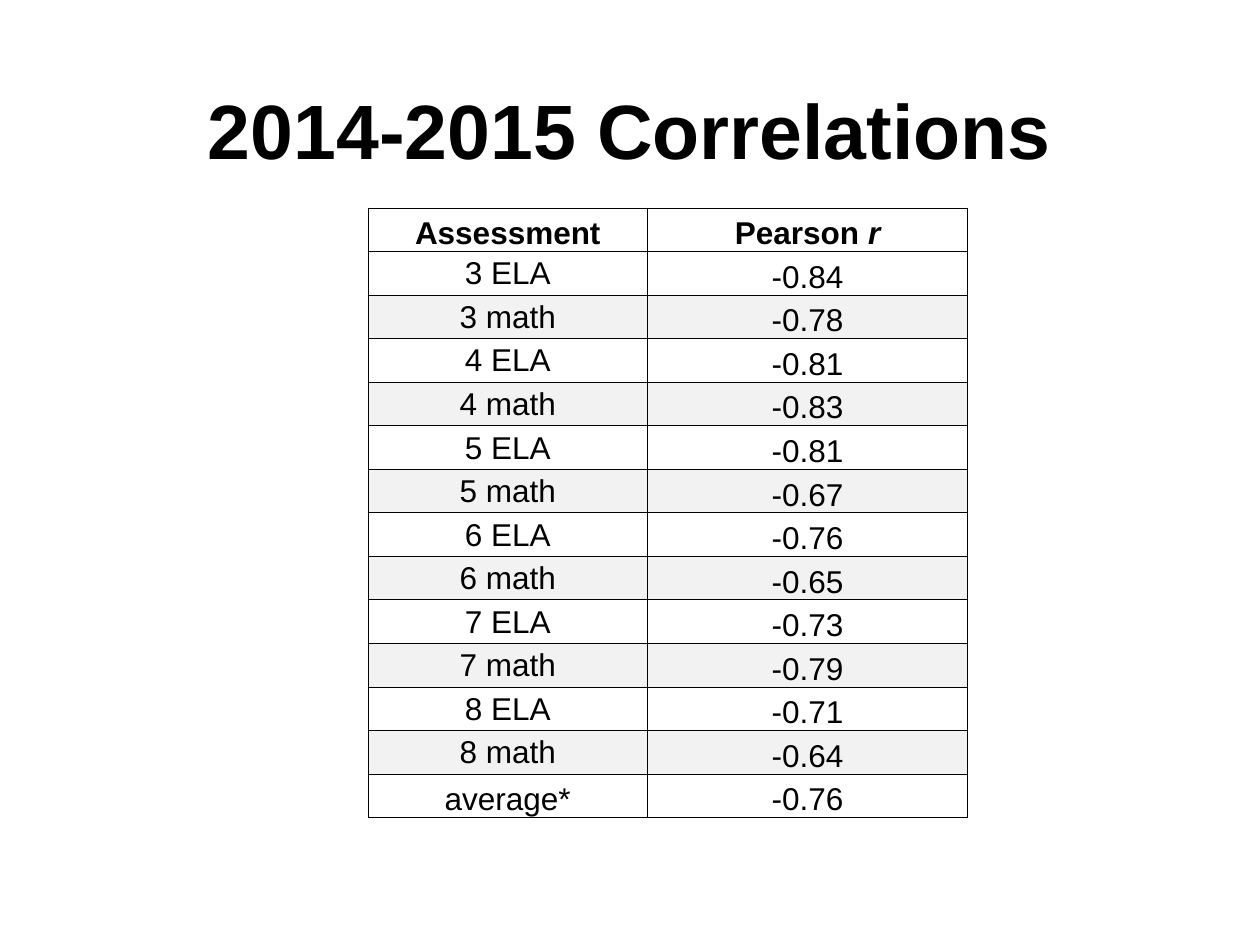
from lxml.etree import SubElement
from pptx import Presentation
from pptx.dml.color import RGBColor
from pptx.enum.text import MSO_ANCHOR, PP_ALIGN
from pptx.oxml.ns import qn
from pptx.util import Inches, Pt

COLORS = {"ink": "000000", "band": "F2F2F2"}
SCORES = [
    ("3 ELA", "-0.84"), ("3 math", "-0.78"),
    ("4 ELA", "-0.81"), ("4 math", "-0.83"),
    ("5 ELA", "-0.81"), ("5 math", "-0.67"),
    ("6 ELA", "-0.76"), ("6 math", "-0.65"),
    ("7 ELA", "-0.73"), ("7 math", "-0.79"),
    ("8 ELA", "-0.71"), ("8 math", "-0.64"),
    ("average*", "-0.76"),
]


def write(frame, text, size=18, bold=False, italic=False):
    """Add a centred run to the first paragraph of a text frame."""
    para = frame.paragraphs[0]
    para.alignment = PP_ALIGN.CENTER
    run = para.add_run()
    run.text = text
    font = run.font
    font.name, font.size = "Arial", Pt(size)
    font.bold, font.italic = bold, italic
    font.color.rgb = RGBColor.from_string(COLORS["ink"])


def add_title(slide, left, top, width, height):
    title = slide.shapes.title
    title.left, title.top = Inches(left), Inches(top)
    title.width, title.height = Inches(width), Inches(height)
    title.text_frame.vertical_anchor = MSO_ANCHOR.MIDDLE
    write(title.text_frame, "2014-2015 Correlations", size=44, bold=True)


def add_border(cell):
    props = cell._tc.get_or_add_tcPr()
    for side in ("lnL", "lnR", "lnT", "lnB"):
        line = SubElement(props, qn(f"a:{side}"), w=str(Pt(0.5)))
        fill = SubElement(line, qn("a:solidFill"))
        SubElement(fill, qn("a:srgbClr"), val=COLORS["ink"])


def style_cell(cell, anchor, band):
    cell.margin_left = cell.margin_right = cell.margin_top = Inches(0.01)
    cell.margin_bottom = 0
    cell.vertical_anchor = anchor
    add_border(cell)
    if band:
        cell.fill.solid()
        cell.fill.fore_color.rgb = RGBColor.from_string(COLORS["band"])
    else:
        cell.fill.background()


def add_scores(slide, left, top, width, height):
    count = len(SCORES) + 1
    table = slide.shapes.add_table(
        count, 2, Inches(left), Inches(top), Inches(width), Inches(height)
    ).table
    first = 2.22
    table.columns[0].width = Inches(first)
    table.columns[1].width = Inches(width - first)
    for row in table.rows:
        row.height = Inches(height / count)

    for i in range(count):
        for j in range(2):
            grade = j == 0 and 0 < i < count - 1
            anchor = MSO_ANCHOR.MIDDLE if grade else MSO_ANCHOR.BOTTOM
            style_cell(table.cell(i, j), anchor, band=i > 0 and i % 2 == 0)

    write(table.cell(0, 0).text_frame, "Assessment", bold=True)
    head = table.cell(0, 1).text_frame
    write(head, "Pearson", bold=True)
    write(head, " r", bold=True, italic=True)
    for i, score in enumerate(SCORES, 1):
        for j, text in enumerate(score):
            write(table.cell(i, j).text_frame, text)


def main():
    deck = Presentation()
    deck.slide_width, deck.slide_height = Inches(10), Inches(7.5)
    slide = deck.slides.add_slide(deck.slide_layouts[5])
    add_title(slide, 0.5, 0.4, 9, 1.25)
    add_scores(slide, 2.92, 1.65, 4.76, 4.84)
    deck.save("out.pptx")


if __name__ == "__main__":
    main()
